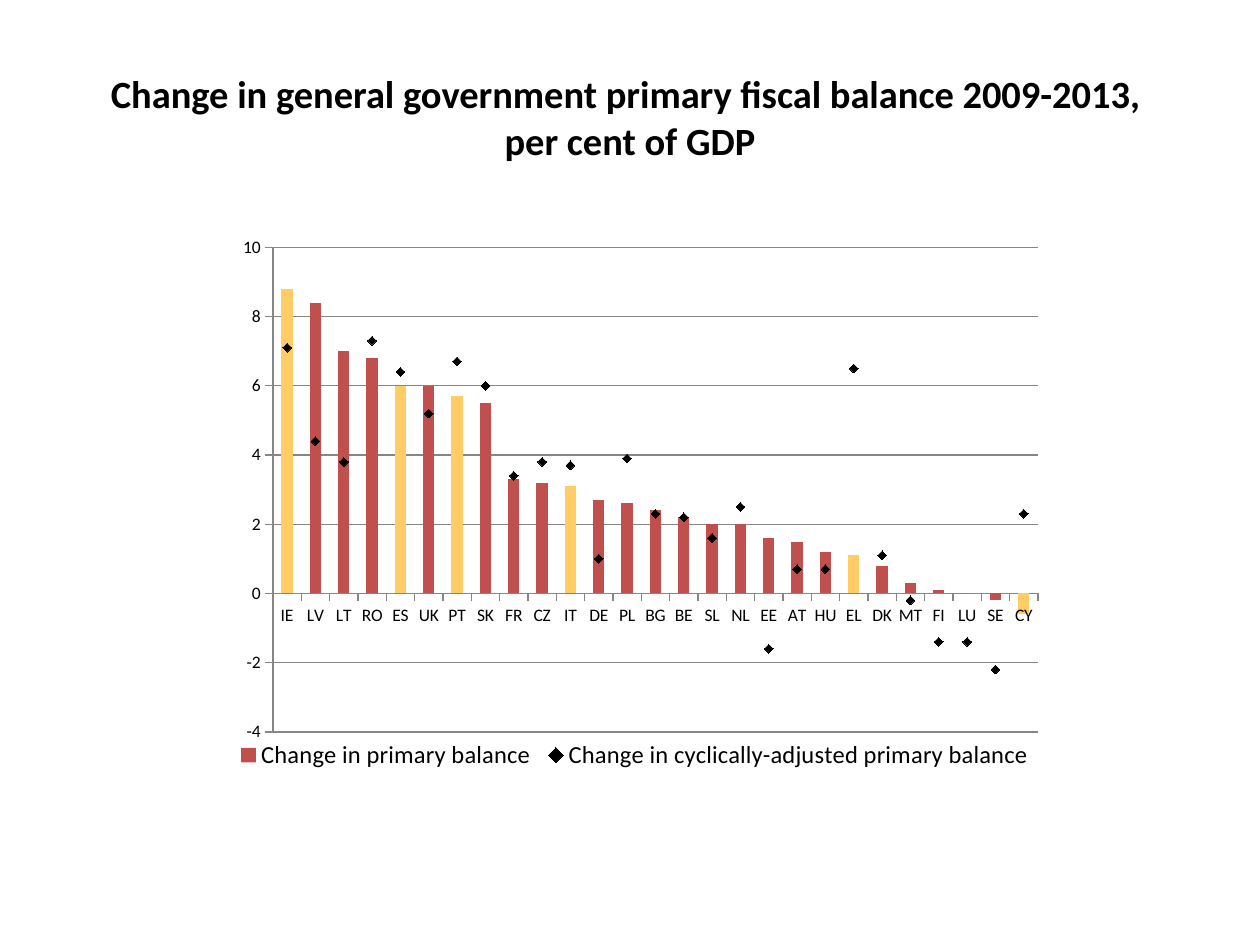
from lxml import etree
from pptx import Presentation
from pptx.chart.data import CategoryChartData
from pptx.dml.color import RGBColor
from pptx.enum.chart import (XL_CHART_TYPE, XL_LEGEND_POSITION, XL_MARKER_STYLE,
                             XL_TICK_LABEL_POSITION, XL_TICK_MARK)
from pptx.enum.text import MSO_ANCHOR, PP_ALIGN
from pptx.oxml import parse_xml
from pptx.oxml.ns import nsdecls, qn
from pptx.util import Inches, Pt

FONT = "Calibri"
COLORS = {"text": "000000", "bar": "C0504D", "highlight": "FFCC66",
          "marker": "000000", "axis": "868686"}

COUNTRIES = ("IE LV LT RO ES UK PT SK FR CZ IT DE PL BG BE SL NL EE AT HU EL "
             "DK MT FI LU SE CY").split()
HIGHLIGHTED = {"IE", "ES", "PT", "IT", "EL", "CY"}
SERIES = {
    "Change in primary balance": [
        8.8, 8.4, 7, 6.8, 6, 6, 5.7, 5.5, 3.3, 3.2, 3.1, 2.7, 2.6, 2.4,
        2.2, 2, 2, 1.6, 1.5, 1.2, 1.1, 0.8, 0.3, 0.1, 0, -0.2, -0.6],
    "Change in cyclically-adjusted primary balance": [
        7.1, 4.4, 3.8, 7.3, 6.4, 5.2, 6.7, 6, 3.4, 3.8, 3.7, 1, 3.9, 2.3,
        2.2, 1.6, 2.5, -1.6, 0.7, 0.7, 6.5, 1.1, -0.2, -1.4, -1.4, -2.2, 2.3],
}


def rgb(name):
    return RGBColor.from_string(COLORS[name])


def set_font(font, size, color="text", bold=False):
    font.name, font.size, font.bold = FONT, Pt(size), bold
    font.color.rgb = rgb(color)


def set_text(tf, text, size, align=PP_ALIGN.CENTER, **font):
    tf.word_wrap = True
    tf.vertical_anchor = MSO_ANCHOR.MIDDLE
    p = tf.paragraphs[0]
    p.text = text
    p.alignment = align
    for r in p.runs:
        set_font(r.font, size, **font)


def fill(fmt, color):
    fmt.fill.solid()
    fmt.fill.fore_color.rgb = rgb(color)


def set_line(line, color, width=0.75):
    line.color.rgb = rgb(color)
    line.width = Pt(width)


def move_last_series_to_line(chart):
    """Turn the last bar series into a line series on the same axes."""
    bar = chart.plots[0]._element
    ser = bar.findall(qn("c:ser"))[-1]
    line = parse_xml(f'<c:lineChart {nsdecls("c")}><c:grouping val="standard"/>'
                     '<c:varyColors val="0"/><c:marker val="1"/></c:lineChart>')
    for invert in ser.findall(qn("c:invertIfNegative")):
        ser.remove(invert)
    line.insert(2, ser)
    for ax in bar.findall(qn("c:axId")):
        etree.SubElement(line, qn("c:axId")).set("val", ax.get("val"))
    bar.addnext(line)


def set_layout(element, x, y, w, h, inner=False):
    """Place a chart part by fractions of the chart's size."""
    for old in element.findall(qn("c:layout")):
        element.remove(old)
    values = {"xMode": "edge", "yMode": "edge", "x": x, "y": y, "w": w, "h": h}
    if inner:
        values = {"layoutTarget": "inner", **values}
    parts = "".join(f'<c:{k} val="{v}"/>' for k, v in values.items())
    layout = parse_xml(f'<c:layout {nsdecls("c")}><c:manualLayout>{parts}'
                       '</c:manualLayout></c:layout>')
    position = element.find(qn("c:legendPos"))
    if position is None:
        element.insert(0, layout)
    else:
        position.addnext(layout)


def format_axes(chart):
    for axis in (chart.category_axis, chart.value_axis):
        axis.major_tick_mark = XL_TICK_MARK.OUTSIDE
        axis.minor_tick_mark = XL_TICK_MARK.NONE
        axis.tick_label_position = XL_TICK_LABEL_POSITION.NEXT_TO_AXIS
        set_font(axis.tick_labels.font, 10)
        set_line(axis.format.line, "axis")
    axis = chart.value_axis
    axis.minimum_scale, axis.maximum_scale, axis.major_unit = -4, 10, 2
    axis.tick_labels.number_format = "0"
    axis.tick_labels.number_format_is_linked = False
    axis.has_major_gridlines = True
    set_line(axis.major_gridlines.format.line, "axis")


def add_balance_chart(s, left, top, width, height):
    data = CategoryChartData()
    data.categories = COUNTRIES
    for name, values in SERIES.items():
        data.add_series(name, values)
    chart = s.shapes.add_chart(XL_CHART_TYPE.COLUMN_CLUSTERED, Inches(left),
                               Inches(top), Inches(width), Inches(height), data).chart
    chart.has_title = False
    set_font(chart.font, 10)
    move_last_series_to_line(chart)
    columns, points = chart.plots
    columns.gap_width = 150
    columns.vary_by_categories = False

    # Columns, with some countries highlighted
    bars = columns.series[0]
    bars.invert_if_negative = False
    fill(bars.format, "bar")
    for i, country in enumerate(COUNTRIES):
        if country in HIGHLIGHTED:
            fill(bars.points[i].format, "highlight")

    # Diamonds without a connecting line
    diamonds = points.series[0]
    diamonds.smooth = False
    diamonds.format.line.fill.background()
    diamonds.marker.style = XL_MARKER_STYLE.DIAMOND
    diamonds.marker.size = 5
    fill(diamonds.marker.format, "marker")
    set_line(diamonds.marker.format.line, "marker")

    format_axes(chart)

    # Legend and plot area
    chart.has_legend = True
    chart.legend.position = XL_LEGEND_POSITION.BOTTOM
    chart.legend.include_in_layout = False
    set_font(chart.legend.font, 14)
    set_layout(chart.legend._element, 0.01, 0.88, 0.97, 0.08)
    plot_area = chart.value_axis._element.getparent()
    set_layout(plot_area, 0.06, 0.04, 0.92, 0.84, inner=True)


def add_title(s, text, left, top, width, height):
    sp = s.shapes.title
    sp.left, sp.top, sp.width, sp.height = map(Inches, (left, top, width, height))
    set_text(sp.text_frame, text, 22, bold=True)


def main():
    prs = Presentation()
    prs.slide_width, prs.slide_height = Inches(10), Inches(7.5)
    s = prs.slides.add_slide(prs.slide_layouts[5])
    add_title(s, "Change in general government primary fiscal balance 2009-2013, "
                 "\vper cent of GDP", 0.5, 0.3, 9, 1.25)
    add_balance_chart(s, 1.77, 1.78, 6.6, 4.58)
    prs.save("out.pptx")


if __name__ == "__main__":
    main()
